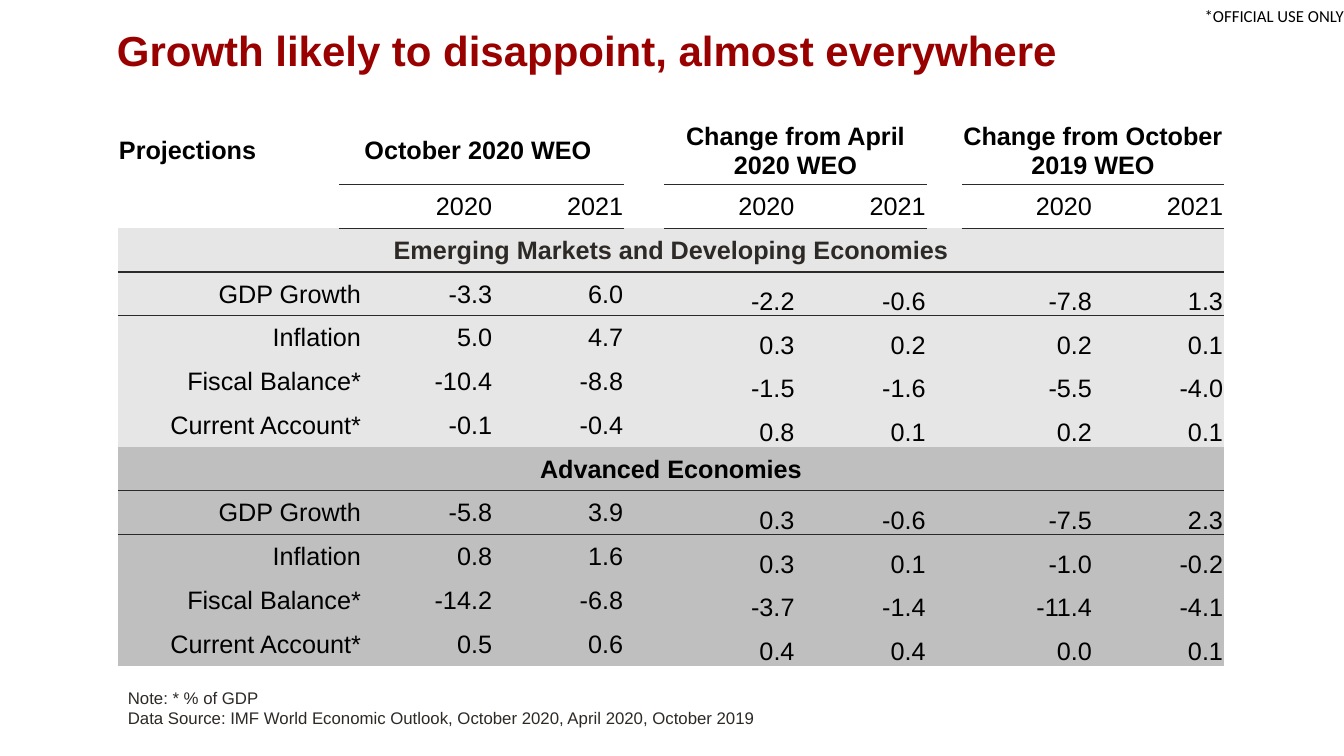
from lxml.etree import SubElement
from pptx import Presentation
from pptx.dml.color import RGBColor
from pptx.enum.text import MSO_ANCHOR, PP_ALIGN
from pptx.oxml import parse_xml
from pptx.oxml.ns import nsdecls, qn

COLORS = {"title": "990000", "text": "000000", "dark": "2D2926",
          "white": "FFFFFF", "emerging": "E7E6E6", "advanced": "BFBFBF"}
NO_STYLE = "{2D5ABB26-0587-4C30-8999-92F81FD0307C}"

COL_WIDTHS = [219, 23, 130, 130, 40, 130, 130, 35, 130, 130]
HEADER_HEIGHT = 67
VALUE_COLS = [2, 3, 5, 6, 8, 9]
# Heading, first column, last column
GROUPS = [("October 2020 WEO ", 1, 3),
          ("Change from April 2020 WEO", 5, 6),
          ("Change from October 2019 WEO", 8, 9)]
SECTIONS = [
    ("Emerging Markets and Developing Economies", "emerging", "dark", [
        ("GDP Growth", "-3.3", "6.0", "-2.2", "-0.6", "-7.8", "1.3"),
        ("Inflation", "5.0", "4.7", "0.3", "0.2", "0.2", "0.1"),
        ("Fiscal Balance*", "-10.4", "-8.8", "-1.5", "-1.6", "-5.5", "-4.0"),
        ("Current Account*", "-0.1", "-0.4", "0.8", "0.1", "0.2", "0.1")]),
    ("Advanced Economies", "advanced", "text", [
        ("GDP Growth", "-5.8", "3.9", "0.3", "-0.6", "-7.5", "2.3"),
        ("Inflation", "0.8", "1.6", "0.3", "0.1", "-1.0", "-0.2"),
        ("Fiscal Balance*", "-14.2", "-6.8", "-3.7", "-1.4", "-11.4", "-4.1"),
        ("Current Account*", "0.5", "0.6", "0.4", "0.4", "0.0", "0.1")]),
]


def px(n):
    """100 px to the inch."""
    return n * 9144


def style(p, size, color="text", bold=False, align=PP_ALIGN.LEFT, font="Arial"):
    p.alignment = align
    p.font.name = font
    p.font.size = size * 12700
    p.font.bold = bold
    p.font.color.rgb = RGBColor.from_string(COLORS[color])


def add_text(slide, box, lines, margin=None, anchor=MSO_ANCHOR.TOP, **look):
    tf = slide.shapes.add_textbox(*map(px, box)).text_frame
    tf.word_wrap = True
    tf.vertical_anchor = anchor
    if margin is not None:
        tf.margin_left = tf.margin_right = tf.margin_top = tf.margin_bottom = px(margin)
    tf.text = "\n".join(lines)
    for p in tf.paragraphs:
        style(p, 12, **look)


def add_title(slide, box, text):
    sp = slide.shapes.title
    sp.left, sp.top, sp.width, sp.height = map(px, box)
    sp.text_frame.text = text
    sp.text_frame.vertical_anchor = MSO_ANCHOR.TOP
    style(sp.text_frame.paragraphs[0], 30, "title", True)


def set_cell(table, row, col, text, last=None, anchor=MSO_ANCHOR.MIDDLE, **look):
    """Write a cell, merged across to the last column when one is given."""
    cell = table.cell(row, col)
    if last is not None:
        cell.merge(table.cell(row, last))
    cell.margin_left = cell.margin_right = cell.margin_top = px(1)
    cell.margin_bottom = 0
    cell.vertical_anchor = anchor
    cell.text = text
    style(cell.text_frame.paragraphs[0], 18, **look)


def fill_row(table, row, color):
    for cell in table.rows[row].cells:
        cell.fill.solid()
        cell.fill.fore_color.rgb = RGBColor.from_string(COLORS[color])


def rule_below(table, row, first, last):
    """Draw a 1 pt line between a row and the next one."""
    for col in range(first, last + 1):
        for r, side in ((row, "lnB"), (row + 1, "lnT")):
            ln = parse_xml(f'<a:{side} {nsdecls("a")} w="12700"><a:solidFill>'
                           f'<a:srgbClr val="{COLORS["dark"]}"/></a:solidFill></a:{side}>')
            table.cell(r, col)._tc.get_or_add_tcPr().insert(0, ln)


def add_section(table, top, name, color, name_color, rows):
    for row in range(top, top + len(rows) + 1):
        fill_row(table, row, color)
    set_cell(table, top, 0, name, len(COL_WIDTHS) - 1,
             color=name_color, bold=True, align=PP_ALIGN.CENTER)
    rule_below(table, top, 0, len(COL_WIDTHS) - 1)
    for row, (label, *values) in enumerate(rows, top + 1):
        set_cell(table, row, 0, label, 1, align=PP_ALIGN.RIGHT)
        for col, value in zip(VALUE_COLS, values):
            anchor = MSO_ANCHOR.MIDDLE if col <= 3 else MSO_ANCHOR.BOTTOM
            set_cell(table, row, col, value, anchor=anchor, align=PP_ALIGN.RIGHT)


def add_projections(slide, box):
    n_rows = 2 + sum(1 + len(rows) for *_, rows in SECTIONS)
    table = slide.shapes.add_table(n_rows, len(COL_WIDTHS), *map(px, box)).table
    table.first_row = table.horz_banding = False
    tbl_pr = table._tbl.tblPr
    style_id = tbl_pr.find(qn("a:tableStyleId"))
    if style_id is None:
        style_id = SubElement(tbl_pr, qn("a:tableStyleId"))
    style_id.text = NO_STYLE
    for column, width in zip(table.columns, COL_WIDTHS):
        column.width = px(width)
    for row in table.rows:
        row.height = px(box[3] - HEADER_HEIGHT) // (n_rows - 1)
    table.rows[0].height = px(HEADER_HEIGHT)

    # Headings and years
    fill_row(table, 0, "white")
    fill_row(table, 1, "white")
    set_cell(table, 0, 0, "Projections", bold=True)
    for heading, first, last in GROUPS:
        set_cell(table, 0, first, heading, last, bold=True, align=PP_ALIGN.CENTER)
        rule_below(table, 0, first, last)
        merge_to = last - 1 if last - first > 1 else None
        set_cell(table, 1, first, "2020", merge_to, align=PP_ALIGN.RIGHT)
        set_cell(table, 1, last, "2021", align=PP_ALIGN.RIGHT)

    # Country groups
    top = 2
    for section in SECTIONS:
        add_section(table, top, *section)
        top += 1 + len(section[-1])


def main():
    prs = Presentation()
    prs.slide_width, prs.slide_height = px(1333), px(750)
    slide = prs.slides.add_slide(prs.slide_layouts[5])
    add_text(slide, (1157, 0, 176, 32), ["*OFFICIAL USE ONLY"], margin=0,
             anchor=MSO_ANCHOR.MIDDLE, align=PP_ALIGN.RIGHT, font="Calibri")
    add_title(slide, (106, 19, 1245, 61), "Growth likely to disappoint, almost everywhere")
    add_projections(slide, (117, 116, 1097, 545))
    add_text(slide, (117, 677, 767, 50),
             ["Note: * % of GDP",
              "Data Source: IMF World Economic Outlook, October 2020, April 2020, October 2019"],
             color="dark")
    prs.save("out.pptx")


if __name__ == "__main__":
    main()
